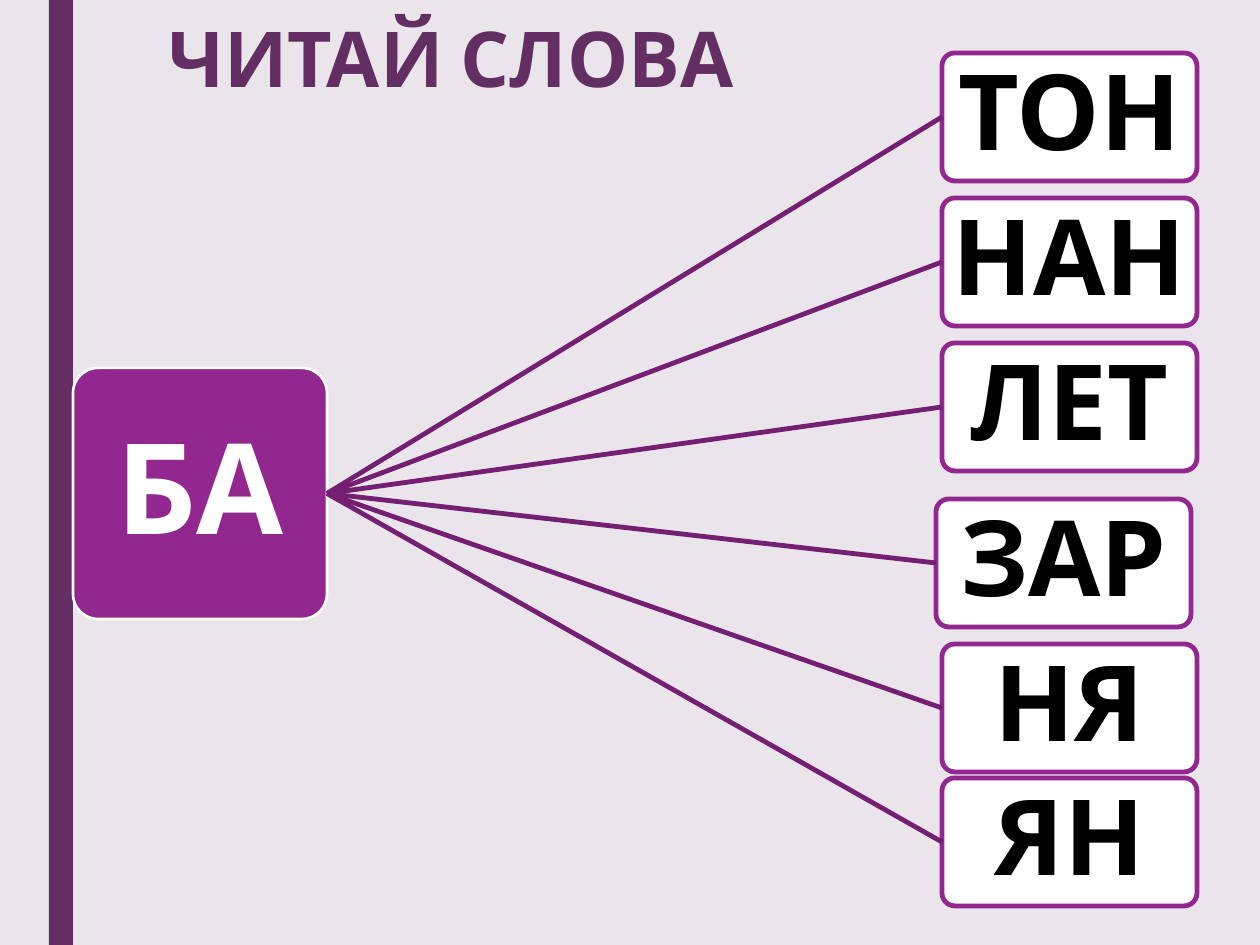
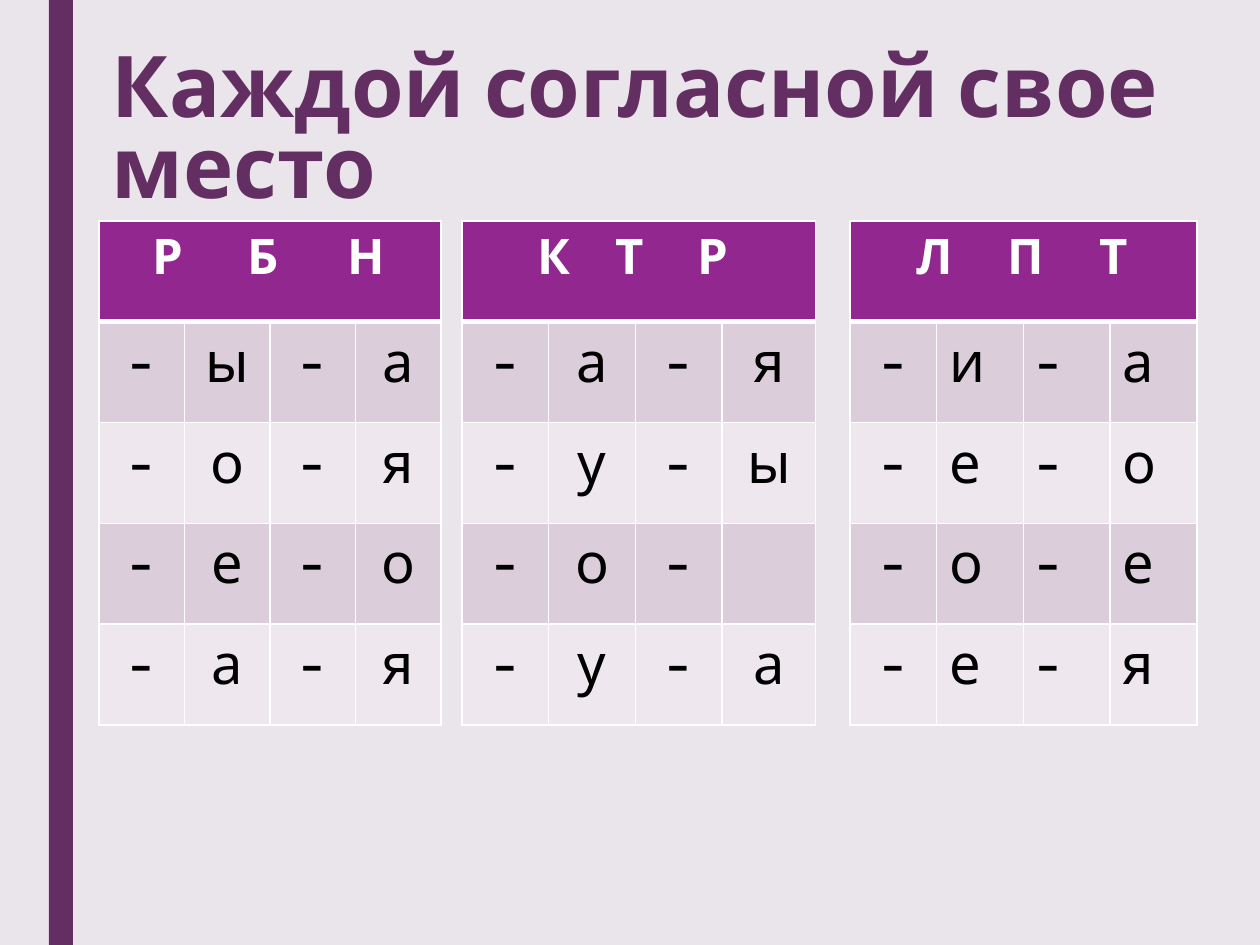
from dataclasses import dataclass

from lxml import etree
from pptx import Presentation
from pptx import util as u
from pptx.dml.color import RGBColor
from pptx.enum import shapes, text
from pptx.oxml import ns

WIDE, HIGH = 1260, 945


@dataclass(frozen=True)
class Theme:
    """Colours, font and type sizes shared by the slides."""
    font: str = "Cabin"
    back: str = "EAE5EB"
    dark: str = "632E62"
    main: str = "92278F"
    link: str = "751F73"
    white: str = "FFFFFF"
    black: str = "000000"
    bands: tuple = ("DCCDDB", "EEE8EE")
    title: float = 44
    long: float = 48.6
    hub: float = 72
    card: float = 60
    head: float = 28
    cell: float = 32


T = Theme()
CENTER = text.PP_ALIGN.CENTER
LEFT = text.PP_ALIGN.LEFT


def px(n):
    """Turn pixels into EMU."""
    return u.Emu(round(n * 914400 / 126))


def rgb(code):
    """Read a colour code."""
    return RGBColor.from_string(code)


def write(para, words, size, color, bold=True, align=CENTER, space=None):
    """Add one styled run to a paragraph."""
    para.alignment = align
    if space:
        para.line_spacing = space
    run = para.add_run()
    run.text = words
    font = run.font
    font.name, font.size, font.bold = T.font, u.Pt(size), bold
    font.color.rgb = rgb(color)


def inset(frame, side, top):
    """Set wrapping and the insets of a text frame."""
    frame.word_wrap = True
    frame.margin_left = frame.margin_right = px(side)
    frame.margin_top = frame.margin_bottom = px(top)


def start(deck):
    """Add a slide with the background and the side band."""
    slide = deck.slides.add_slide(deck.slide_layouts[6])
    fill = slide.background.fill
    fill.solid()
    fill.fore_color.rgb = rgb(T.back)
    draw(slide, shapes.MSO_SHAPE.RECTANGLE, (49, 0, 24, HIGH), T.dark)
    return slide


def draw(slide, kind, box, fill, line=None, width=1):
    """Add a filled preset shape."""
    shape = slide.shapes.add_shape(kind, *map(px, box))
    shape.shadow.inherit = False
    shape.fill.solid()
    shape.fill.fore_color.rgb = rgb(fill)
    if line:
        shape.line.color.rgb = rgb(line)
        shape.line.width = u.Pt(width)
    else:
        shape.line.fill.background()
    return shape


def title(slide, words, box, size, align, space, top):
    """Add the slide title."""
    frame = slide.shapes.add_textbox(*map(px, box)).text_frame
    inset(frame, 13, top)
    write(frame.paragraphs[0], words, size, T.dark, True, align, space)


def tile(slide, words, box, fill, line, width, size, color, pad):
    """Add a rounded tile with centred letters."""
    shape = draw(slide, shapes.MSO_SHAPE.ROUNDED_RECTANGLE, box, fill, line, width)
    shape.adjustments[0] = 0.1
    frame = shape.text_frame
    inset(frame, pad, pad)
    frame.vertical_anchor = text.MSO_ANCHOR.MIDDLE
    write(frame.paragraphs[0], words, size, color, space=0.9)
    return shape


def join(slide, hub, card):
    """Link the right side of the hub to the left side of a card."""
    line = slide.shapes.add_connector(shapes.MSO_CONNECTOR.STRAIGHT, 0, 0, 0, 0)
    line.begin_connect(hub, 3)
    line.end_connect(card, 1)
    line.line.color.rgb = rgb(T.link)
    line.line.width = u.Pt(2.75)
    etree.SubElement(line._element.spPr, ns.qn("a:effectLst"))


def edge(cell, row):
    """Draw white cell borders, thick below the header."""
    props = cell._tc.get_or_add_tcPr()
    for side in "LRTB":
        thick = (row, side) in ((0, "B"), (1, "T"))
        line = etree.SubElement(props, ns.qn("a:ln" + side), w=str(u.Pt(3 if thick else 1)))
        fill = etree.SubElement(line, ns.qn("a:solidFill"))
        etree.SubElement(fill, ns.qn("a:srgbClr"), val=T.white)


def stops(para, marks):
    """Set left tab stops in a paragraph."""
    tabs = etree.SubElement(para._p.get_or_add_pPr(), ns.qn("a:tabLst"))
    for mark in marks:
        etree.SubElement(tabs, ns.qn("a:tab"), pos=str(px(mark)), algn="l")


def grid(slide, left, width, head, pad, marks, rows, align=CENTER):
    """Add a letter table under a header of spaced consonants."""
    count = len(rows) + 1
    table = slide.shapes.add_table(count, 4, px(left), px(221), px(width), px(504)).table
    for col in table.columns:
        col.width = u.Emu(px(width) // 4)
    for r, row in enumerate(table.rows):
        row.height = u.Emu(px(504) // count)
        for c, cell in enumerate(row.cells):
            edge(cell, r)
            cell.fill.solid()
            cell.fill.fore_color.rgb = rgb(T.bands[(r - 1) % 2] if r else T.main)
            if r and rows[r - 1][c:c + 1]:
                side = align if c else CENTER
                write(cell.text_frame.paragraphs[0], rows[r - 1][c], T.cell, T.black, False, side)
    top = table.cell(0, 0)
    top.merge(table.cell(0, 3))
    top.margin_left = px(pad)
    para = top.text_frame.paragraphs[0]
    write(para, "\t".join(head), T.head, T.white, align=LEFT)
    stops(para, marks)


def words(deck):
    """Build the slide that joins a syllable to word endings."""
    slide = start(deck)
    hub = tile(slide, "БА", (73, 368, 254, 251), T.main, T.white, 1.5, T.hub, T.white, 6)
    cards = (("ТОН", 942, 53), ("НАН", 942, 198), ("ЛЕТ", 942, 343),
             ("ЗАР", 936, 499), ("НЯ", 942, 644), ("ЯН", 942, 778))
    for word, left, top in cards:
        card = tile(slide, word, (left, top, 255, 128), T.white, T.main, 2.75, T.card, T.black, 5)
        join(slide, hub, card)
    title(slide, "ЧИТАЙ СЛОВА", (73, 21, 756, 126), T.title, CENTER, 0.89, 1)


def places(deck):
    """Build the slide with three consonant tables."""
    slide = start(deck)
    title(slide, "Каждой согласной свое место", (99, 42, 1160, 126), T.long, LEFT, 0.79, 11)
    grid(slide, 99, 342, "РБН", 54, (95, 195), ("-ы-а", "-о-я", "-е-о", "-а-я"))
    grid(slide, 462, 347, "КТР", 76, (78, 160), ("-а-я", "-у-ы", "-о-", "-у-а"))
    grid(slide, 850, 347, "ЛПТ", 67, (91, 183), ("-и-а", "-е-о", "-о-е", "-е-я"), LEFT)


def main():
    """Build and save the deck."""
    deck = Presentation()
    deck.slide_width, deck.slide_height = px(WIDE), px(HIGH)
    words(deck)
    places(deck)
    deck.save("out.pptx")


if __name__ == "__main__":
    main()
